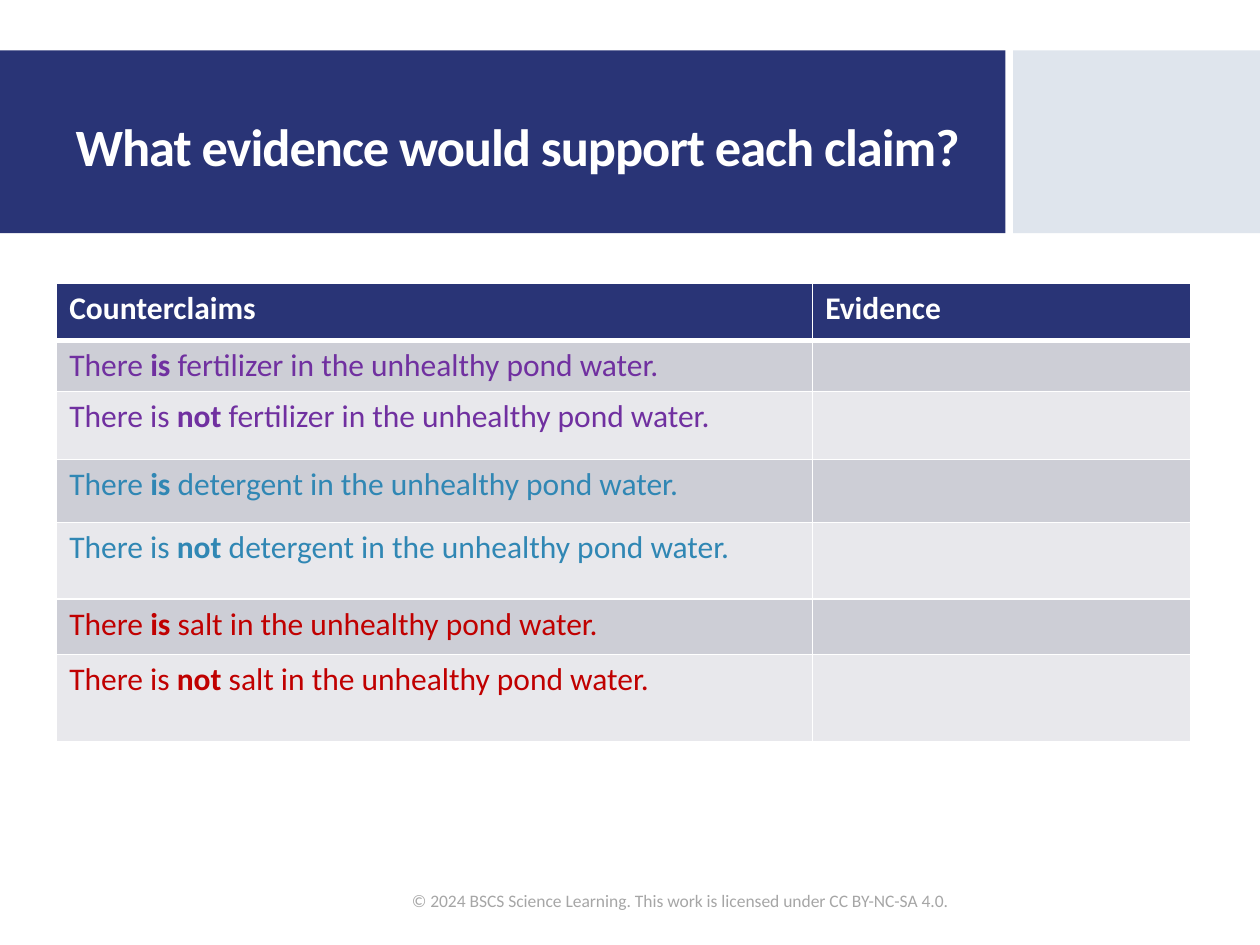
import dataclasses

import pptx
import pptx.dml.color
import pptx.enum.shapes
import pptx.enum.text
import pptx.oxml.ns
import pptx.util
from lxml import etree

Inches = pptx.util.Inches
Pt = pptx.util.Pt
MIDDLE = pptx.enum.text.MSO_ANCHOR.MIDDLE


@dataclasses.dataclass(frozen=True)
class Theme:
    font: str = "Calibri"
    navy: str = "293476"
    pale: str = "DFE5ED"
    white: str = "FFFFFF"
    stripes: tuple = ("CDCED6", "E8E8EC")
    purple: str = "7030A0"
    blue: str = "3087B4"
    red: str = "C00000"
    gray: str = "A6A6A6"
    title_size: int = 30
    table_size: int = 18
    footer_size: int = 10


def rgb(color):
    return pptx.dml.color.RGBColor.from_string(color)


def write_text(p, text, *, font, size, color, bold=False, spacing=None):
    """Fill a paragraph; parts between asterisks are bold."""
    for i, part in enumerate(text.split("*")):
        if not part:
            continue
        r = p.add_run()
        r.text = part
        r.font.name = font
        r.font.size = Pt(size)
        r.font.bold = bold or i % 2 == 1
        r.font.color.rgb = rgb(color)
        if spacing is not None:
            r._r.get_or_add_rPr().set("spc", str(round(spacing * 100)))


def set_borders(cell, color, bottom):
    """Draw 1 pt cell borders, with the bottom width given in points."""
    qn = pptx.oxml.ns.qn
    tc_pr = cell._tc.get_or_add_tcPr()
    for side, width in (("L", 1), ("R", 1), ("T", 1), ("B", bottom)):
        ln = etree.SubElement(tc_pr, qn(f"a:ln{side}"), w=str(Pt(width)))
        fill = etree.SubElement(ln, qn("a:solidFill"))
        etree.SubElement(fill, qn("a:srgbClr"), val=color)


class SlideBuilder:
    def __init__(self, prs, theme):
        self.theme = theme
        self.s = prs.slides.add_slide(prs.slide_layouts[5])

    def band(self, left, top, width, height, color):
        sp = self.s.shapes.add_shape(
            pptx.enum.shapes.MSO_SHAPE.RECTANGLE,
            Inches(left), Inches(top), Inches(width), Inches(height))
        sp.shadow.inherit = False
        sp.fill.solid()
        sp.fill.fore_color.rgb = rgb(color)
        sp.line.fill.background()

    def title(self, text, left, top, width, height):
        sp = self.s.shapes.title
        self.s.shapes._spTree.append(sp._element)  # bring in front of the bands
        sp.left, sp.top = Inches(left), Inches(top)
        sp.width, sp.height = Inches(width), Inches(height)
        tf = sp.text_frame
        tf.vertical_anchor = MIDDLE
        tf.auto_size = pptx.enum.text.MSO_AUTO_SIZE.NONE
        p = tf.paragraphs[0]
        p.alignment = pptx.enum.text.PP_ALIGN.LEFT
        p.line_spacing = 0.9
        write_text(p, text, font=self.theme.font, size=self.theme.title_size,
                   color=self.theme.white, bold=True, spacing=-0.6)

    def claims_table(self, left, top, col_widths, row_heights, header, claims):
        t = self.theme
        table = self.s.shapes.add_table(
            len(row_heights), len(col_widths), Inches(left), Inches(top),
            Inches(sum(col_widths)), Inches(sum(row_heights))).table
        for column, width in zip(table.columns, col_widths):
            column.width = Inches(width)
        for row, height in zip(table.rows, row_heights):
            row.height = Inches(height)
        rows = [(header, t.white)] + [((claim, ""), color) for claim, color in claims]
        for i, (texts, color) in enumerate(rows):
            is_header = i == 0
            for cell, text in zip(table.rows[i].cells, texts):
                set_borders(cell, t.white, bottom=3 if is_header else 1)
                cell.fill.solid()
                cell.fill.fore_color.rgb = rgb(
                    t.navy if is_header else t.stripes[(i - 1) % 2])
                write_text(cell.text_frame.paragraphs[0], text, font=t.font,
                           size=t.table_size, color=color, bold=is_header)

    def footer(self, text, left, top, width, height):
        sp = self.s.shapes.add_textbox(
            Inches(left), Inches(top), Inches(width), Inches(height))
        tf = sp.text_frame
        tf.word_wrap = True
        tf.vertical_anchor = MIDDLE
        write_text(tf.paragraphs[0], text, font=self.theme.font,
                   size=self.theme.footer_size, color=self.theme.gray)


def main():
    prs = pptx.Presentation()
    prs.slide_width, prs.slide_height = Inches(10), Inches(7.5)
    theme = Theme()
    slide = SlideBuilder(prs, theme)
    slide.band(0, 0.4, 7.98, 1.45, theme.navy)
    slide.band(8.04, 0.4, 1.96, 1.45, theme.pale)
    slide.title("What evidence would support each claim?", 0.5, 0.58, 7.5, 1.22)

    substances = (("fertilizer", theme.purple), ("detergent", theme.blue),
                  ("salt", theme.red))
    claims = [(f"There {verb} {substance} in the unhealthy pond water.", color)
              for substance, color in substances
              for verb in ("*is*", "is *not*")]
    slide.claims_table(0.45, 2.25, (6, 3),
                       (0.45, 0.37, 0.54, 0.5, 0.61, 0.44, 0.69),
                       ("Counterclaims", "Evidence"), claims)
    slide.footer("© 2024 BSCS Science Learning. This work is licensed under "
                 "CC BY-NC-SA 4.0.", 3.17, 6.95, 4.85, 0.4)
    prs.save("out.pptx")


if __name__ == "__main__":
    main()
